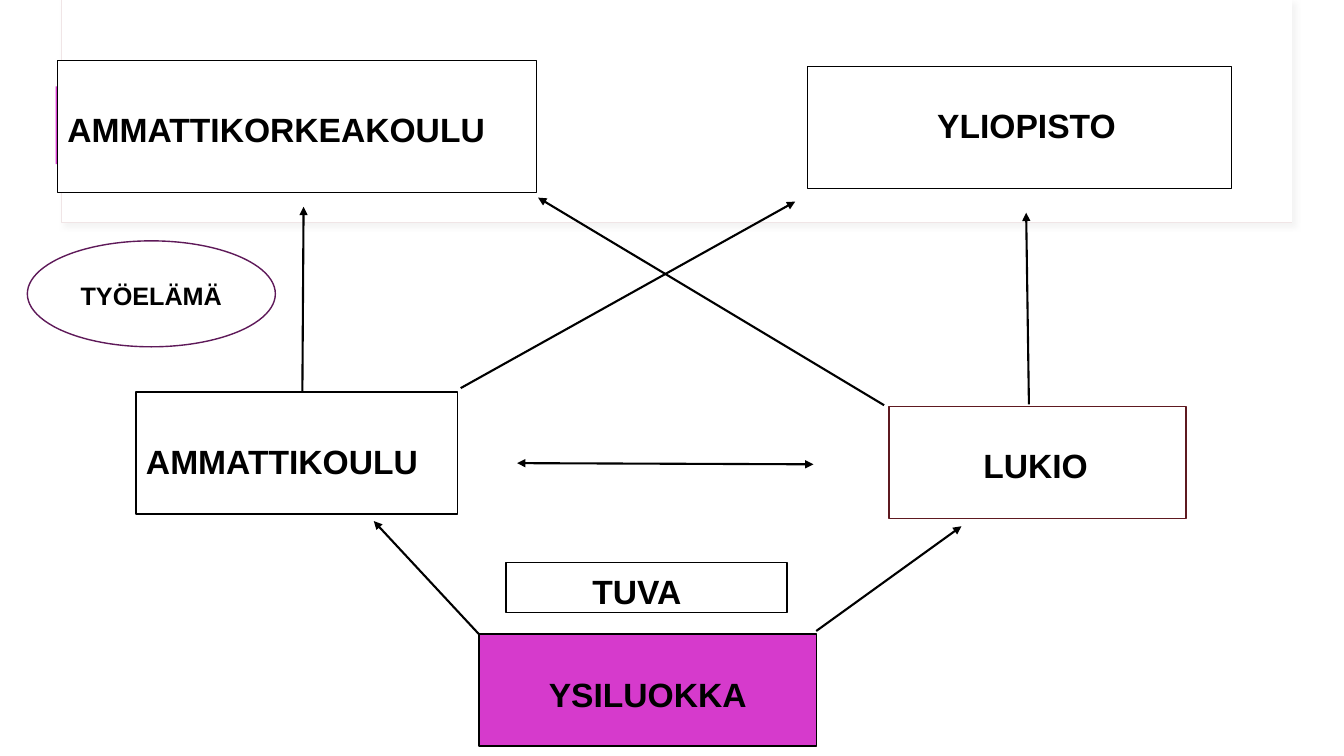
from lxml import etree
from pptx import Presentation
from pptx.dml.color import RGBColor
from pptx.enum.shapes import MSO_CONNECTOR, MSO_SHAPE
from pptx.enum.text import MSO_ANCHOR, PP_ALIGN
from pptx.oxml.ns import qn
from pptx.util import Cm, Pt

RECT, OVAL = MSO_SHAPE.RECTANGLE, MSO_SHAPE.OVAL
STRAIGHT = MSO_CONNECTOR.STRAIGHT
TOP, MIDDLE = MSO_ANCHOR.TOP, MSO_ANCHOR.MIDDLE
LEFT, CENTER = PP_ALIGN.LEFT, PP_ALIGN.CENTER

FONT = "Arial"
COLORS = {
    "white": "FFFFFF",
    "black": "000000",
    "magenta": "D63ACC",
    "wine": "5E1920",
    "plum": "5E1959",
    "frame": "F0E5E6",
    "shadow": "D9D9D9",
}

# Label, box (left, top, width, height), text inset (left, top), align, fill, line
SCHOOLS = [
    ("YSILUOKKA", (12.07, 15.98, 8.51, 2.82), (0.25, 1.0), CENTER, "magenta", "black"),
    ("AMMATTIKOULU", (3.43, 9.88, 8.1, 3.07), (0.25, 1.24), LEFT, "white", "black"),
    ("LUKIO", (22.4, 10.24, 7.49, 2.82), (2.38, 0.98), LEFT, "white", "wine"),
    ("TUVA", (12.75, 14.17, 7.09, 1.27), (2.18, 0.22), LEFT, "white", "black"),
    ("YLIOPISTO", (20.35, 1.68, 10.69, 3.07), (3.27, 0.97), LEFT, "white", "black"),
    ("AMMATTIKORKEAKOULU", (1.45, 1.52, 12.07, 3.33), (0.25, 1.23), LEFT, "white", "black"),
]

# Start point, end point
PATHWAYS = [
    ((20.57, 15.9), (24.23, 13.26)),   # Ysiluokka to lukio
    ((12.07, 15.98), (9.42, 13.13)),   # Ysiluokka to ammattikoulu
    ((7.62, 9.88), (7.65, 5.21)),      # Ammattikoulu to ammattikorkeakoulu
    ((22.28, 10.21), (13.56, 4.98)),   # Lukio to ammattikorkeakoulu
    ((11.61, 9.78), (20.04, 5.08)),    # Ammattikoulu to yliopisto
    ((25.93, 10.19), (25.86, 5.36)),   # Lukio to yliopisto
]
EXCHANGE = ((13.03, 11.67), (20.5, 11.7))  # Between ammattikoulu and lukio


def rgb(name):
    return RGBColor.from_string(COLORS[name])


def add_box(s, kind, box, fill, line=None, width=1):
    sp = s.shapes.add_shape(kind, *[Cm(v) for v in box])
    sp.shadow.inherit = False
    sp.fill.solid()
    sp.fill.fore_color.rgb = rgb(fill)
    if line:
        sp.line.color.rgb = rgb(line)
        sp.line.width = Pt(width)
    else:
        sp.line.fill.background()
    return sp


def add_label(sp, text, size, inset, align, anchor=TOP):
    tf = sp.text_frame
    tf.word_wrap = True
    tf.vertical_anchor = anchor
    tf.margin_left, tf.margin_top = [Cm(v) for v in inset]
    tf.margin_bottom = 0
    p = tf.paragraphs[0]
    p.alignment = align
    r = p.add_run()
    r.text = text
    r.font.name = FONT
    r.font.size = Pt(size)
    r.font.bold = True
    r.font.color.rgb = rgb("black")


def add_soft_shadow(sp):
    effects = sp._element.spPr.find(qn("a:effectLst"))
    shadow = etree.SubElement(effects, qn("a:outerShdw"), blurRad=str(Pt(4)),
                              dist=str(Pt(3)), dir=str(45 * 60000))
    color = etree.SubElement(shadow, qn("a:srgbClr"), val=COLORS["shadow"])
    etree.SubElement(color, qn("a:alpha"), val="30000")


def add_arrow(s, start, end, both=False):
    cn = s.shapes.add_connector(STRAIGHT, *[Cm(v) for v in start + end])
    cn.line.color.rgb = rgb("black")
    cn.line.width = Pt(1.5)
    ln = cn.line._get_or_add_ln()
    for tag in ("a:headEnd", "a:tailEnd") if both else ("a:tailEnd",):
        etree.SubElement(ln, qn(tag), type="triangle")
    etree.SubElement(cn._element.spPr, qn("a:effectLst"))


def main():
    prs = Presentation()
    prs.slide_width, prs.slide_height = Cm(33.87), Cm(19.05)
    s = prs.slides.add_slide(prs.slide_layouts[6])

    # Title band with its accent bar
    frame = add_box(s, RECT, (1.55, 0, 31.01, 5.61), "white", "frame", 0.75)
    add_soft_shadow(frame)
    add_box(s, RECT, (1.57, 0, 30.99, 5.59), "white")
    add_box(s, RECT, (1.4, 2.18, 0.36, 1.96), "magenta")

    # Schools
    for text, box, inset, align, fill, line in SCHOOLS:
        sp = add_box(s, RECT, box, fill, line)
        add_label(sp, text, 24, inset, align)

    # Pathways between schools
    for start, end in PATHWAYS:
        add_arrow(s, start, end)
    add_arrow(s, *EXCHANGE, both=True)

    # Working life
    sp = add_box(s, OVAL, (0.69, 6.07, 6.25, 2.67), "white", "plum")
    add_label(sp, "TYÖELÄMÄ", 18, (0.25, 0.1), CENTER, MIDDLE)

    prs.save("out.pptx")


if __name__ == "__main__":
    main()
